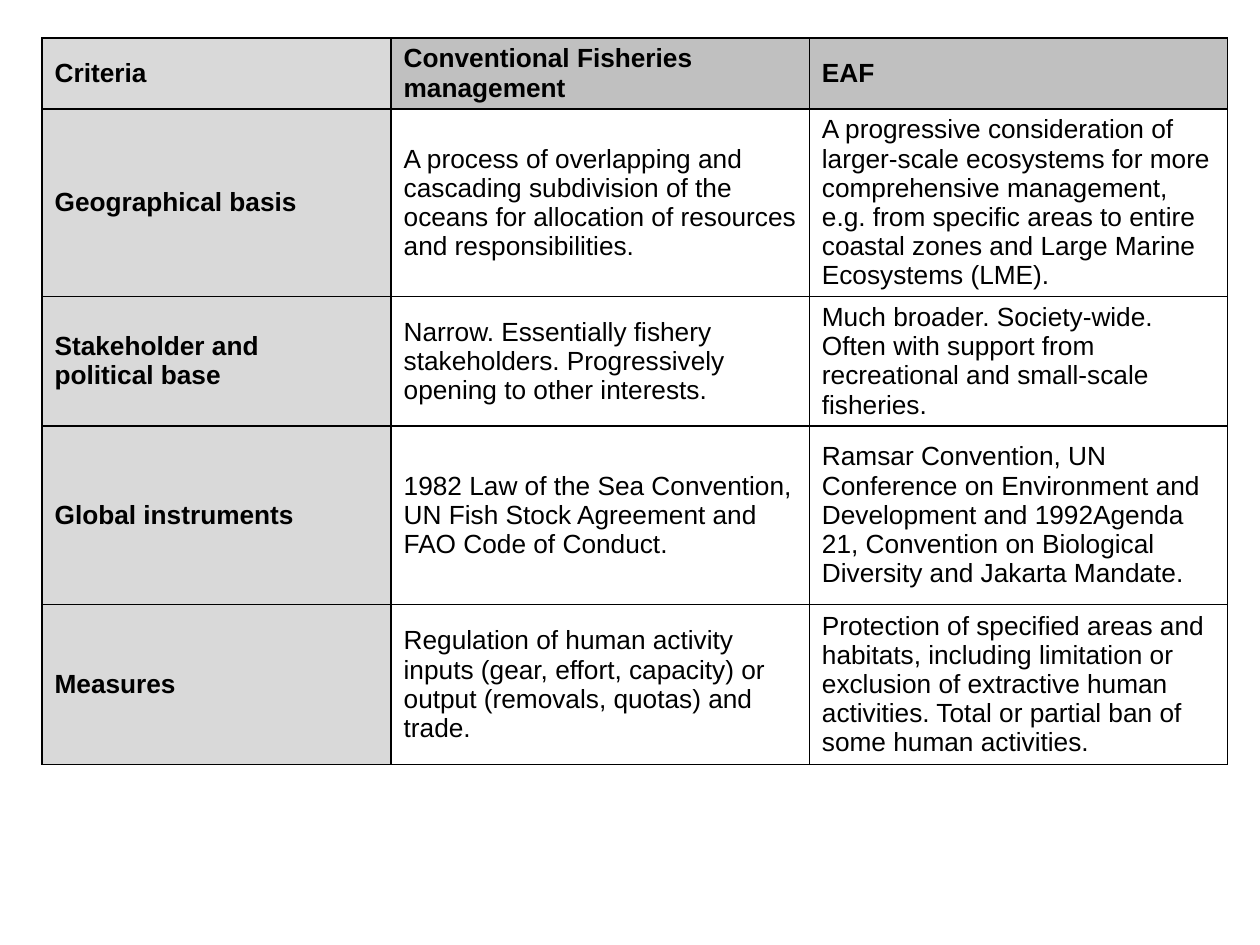
from pptx import Presentation
from pptx.dml.color import RGBColor
from pptx.enum.text import MSO_ANCHOR
from pptx.oxml import parse_xml
from pptx.oxml.ns import nsdecls
from pptx.util import Pt

ROWS = [
    ("Criteria", "Conventional Fisheries management", "EAF"),
    ("Geographical basis",
     "A process of overlapping and cascading subdivision of the oceans "
     "for allocation of resources and responsibilities.",
     "A progressive consideration of larger-scale ecosystems for more "
     "comprehensive management, e.g. from specific areas to entire "
     "coastal zones and Large Marine Ecosystems (LME)."),
    ("Stakeholder and\npolitical base",
     "Narrow. Essentially fishery stakeholders. Progressively opening "
     "to other interests.",
     "Much broader. Society-wide. Often with support from recreational "
     "and small-scale fisheries."),
    ("Global instruments",
     "1982 Law of the Sea Convention, UN Fish Stock Agreement and FAO "
     "Code of Conduct.",
     "Ramsar Convention, UN Conference on Environment and Development "
     "and 1992Agenda 21, Convention on Biological Diversity and Jakarta "
     "Mandate."),
    ("Measures",
     "Regulation of human activity inputs (gear, effort, capacity) or "
     "output (removals, quotas) and trade.",
     "Protection of specified areas and habitats, including limitation "
     "or exclusion of extractive human activities. Total or partial ban "
     "of some human activities."),
]
WIDTHS = (199.5, 239, 239)
HEIGHTS = (40.5, 107, 74, 102, 91.5)
LEFT, TOP = 24, 21.6
BLACK, SIDE, HEAD = "000000", "D9D9D9", "C0C0C0"


def color(code):
    return RGBColor.from_string(code)


def border(cell, last):
    """Draw all four edges, with a thinner right edge in the last column."""
    props = cell._tc.get_or_add_tcPr()
    for n, side in enumerate("LRTB"):
        width = 0.75 if last and side == "R" else 1
        props.insert(n, parse_xml(
            f'<a:ln{side} {nsdecls("a")} w="{Pt(width)}"><a:solidFill>'
            f'<a:srgbClr val="{BLACK}"/></a:solidFill></a:ln{side}>'))


def fill(cell, row, col):
    if col == 0 or row == 0:
        cell.fill.solid()
        cell.fill.fore_color.rgb = color(SIDE if col == 0 else HEAD)
    else:
        cell.fill.background()


def write(cell, text, bold):
    cell.vertical_anchor = MSO_ANCHOR.MIDDLE
    frame = cell.text_frame
    for n, line in enumerate(text.split("\n")):
        para = frame.add_paragraph() if n else frame.paragraphs[0]
        run = para.add_run()
        run.text = line
        font = run.font
        font.name, font.size, font.bold = "Arial", Pt(15), bold
        font.color.rgb = color(BLACK)


def main():
    deck = Presentation()
    deck.slide_width, deck.slide_height = Pt(720), Pt(540)
    slide = deck.slides.add_slide(deck.slide_layouts[6])
    table = slide.shapes.add_table(
        len(ROWS), len(WIDTHS), Pt(LEFT), Pt(TOP),
        Pt(sum(WIDTHS)), Pt(sum(HEIGHTS))).table
    table.horz_banding = False
    for col, width in zip(table.columns, WIDTHS):
        col.width = Pt(width)
    for r, (texts, height) in enumerate(zip(ROWS, HEIGHTS)):
        table.rows[r].height = Pt(height)
        for c, text in enumerate(texts):
            cell = table.cell(r, c)
            write(cell, text, r == 0 or c == 0)
            fill(cell, r, c)
            border(cell, c == len(WIDTHS) - 1)
    deck.save("out.pptx")


if __name__ == "__main__":
    main()
